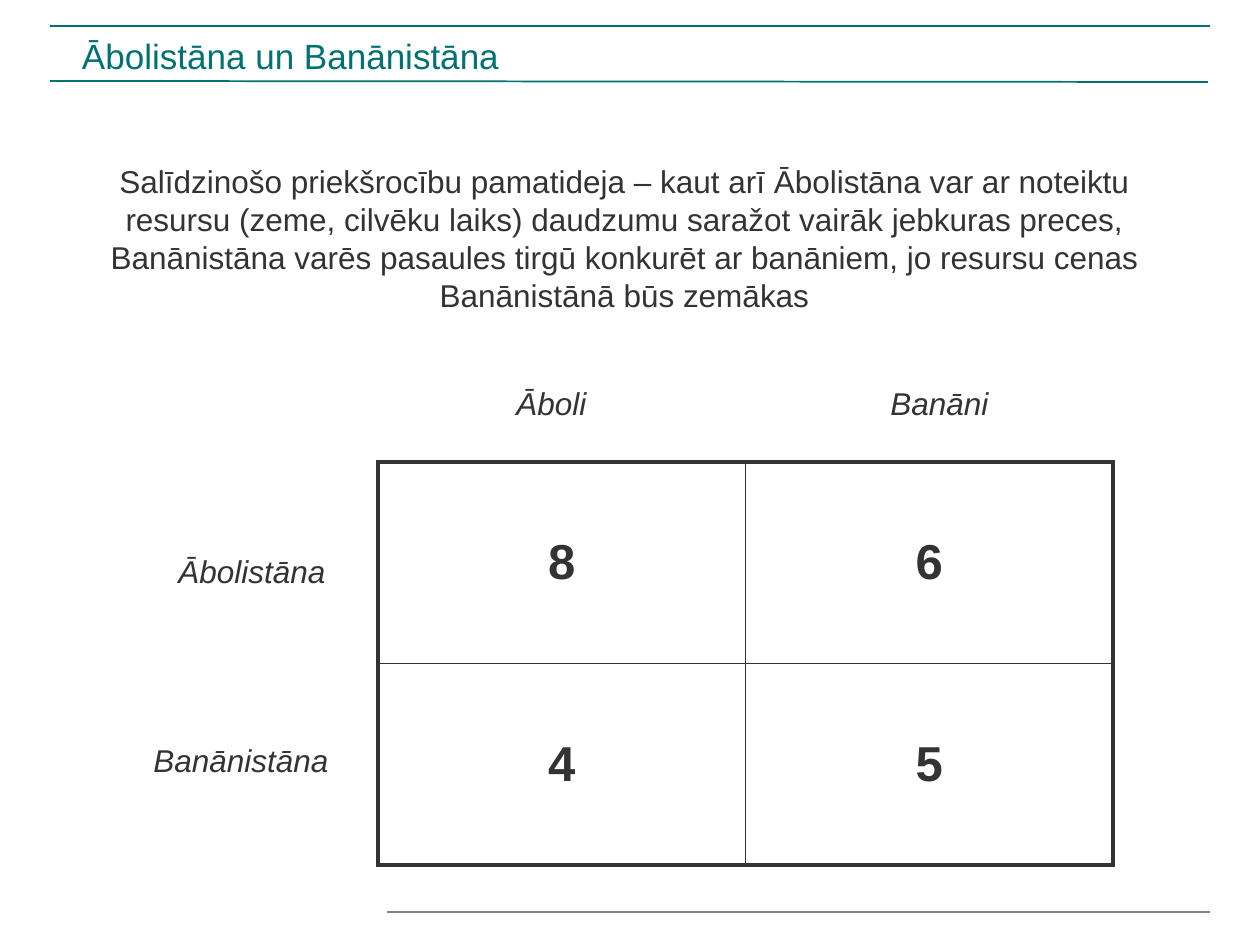
from lxml.etree import SubElement
from pptx import Presentation
from pptx.dml.color import RGBColor
from pptx.enum.shapes import MSO_CONNECTOR
from pptx.enum.text import MSO_ANCHOR, MSO_AUTO_SIZE, PP_ALIGN
from pptx.oxml.ns import qn
from pptx.util import Pt

EMU_PER_PX = 914400 / 126
TEAL = RGBColor(0x00, 0x72, 0x72)
TAUPE = RGBColor(0x8C, 0x82, 0x79)
INK = RGBColor(0x33, 0x33, 0x33)

TITLE_FONT = {"name": "Arial", "size": Pt(20), "bold": False}
BODY_FONT = {"name": "Arial", "size": Pt(18)}
LABEL_FONT = {**BODY_FONT, "italic": True}
VALUE_FONT = {"name": "Arial", "size": Pt(28), "bold": True}
OUTER, INNER = 2.25, 1

TITLE = "Ābolistāna un Banānistāna"
IDEA = (
    "Salīdzinošo priekšrocību pamatideja – kaut arī Ābolistāna var ar noteiktu "
    "resursu (zeme, cilvēku laiks) daudzumu saražot vairāk jebkuras preces, "
    "Banānistāna varēs pasaules tirgū konkurēt ar banāniem, jo resursu cenas "
    "Banānistānā būs zemākas"
)
OUTPUT = [["8", "6"], ["4", "5"]]
GOODS = [("Āboli", 21), ("Banāni", 409)]
COUNTRIES = [("Ābolistāna", -231, 84), ("Banānistāna", -242, 273)]


def px(*lengths):
    """Turn pixel lengths into EMU."""
    return [round(length * EMU_PER_PX) for length in lengths]


def write(frame, text, font_format, color, align=PP_ALIGN.CENTER):
    """Fill a text frame with one formatted paragraph and return it."""
    frame.word_wrap = True
    paragraph = frame.paragraphs[0]
    paragraph.text = text
    paragraph.alignment = align
    font = paragraph.runs[0].font
    for attribute, value in font_format.items():
        setattr(font, attribute, value)
    font.color.rgb = color
    return paragraph


def add_rule(slide, start, end, color):
    """Draw a thin ruling line without a shadow."""
    rule = slide.shapes.add_connector(MSO_CONNECTOR.STRAIGHT, *px(*start, *end))
    rule.line.color.rgb = color
    rule.line.width = Pt(1)
    SubElement(rule._element.spPr, qn("a:effectLst"))


def add_text(slide, box, text, font_format):
    """Add a centred text box."""
    frame = slide.shapes.add_textbox(*px(*box)).text_frame
    write(frame, text, font_format, INK)
    frame.auto_size = MSO_AUTO_SIZE.SHAPE_TO_FIT_TEXT


def add_header(slide, left, top, width, height):
    """Place the title between its two rules."""
    right = left + width
    add_rule(slide, (left, top + height), (right - 2, top + height + 1), TEAL)
    add_rule(slide, (left, top), (right, top), TEAL)
    title = slide.shapes.title
    title.left, title.top, title.width, title.height = px(left + 23, top - 5, 1134, 76)
    frame = title.text_frame
    frame.auto_size = MSO_AUTO_SIZE.NONE
    frame.vertical_anchor = MSO_ANCHOR.MIDDLE
    frame.margin_left, frame.margin_right = px(9, 9)
    frame.margin_top, frame.margin_bottom = px(5, 5)
    write(frame, TITLE, TITLE_FONT, TEAL, PP_ALIGN.LEFT).line_spacing = 0.8


def set_borders(cell, widths):
    """Draw the cell borders with the given widths in points."""
    properties = cell._tc.get_or_add_tcPr()
    for side, width in widths.items():
        border = SubElement(properties, qn(f"a:ln{side}"), w=str(Pt(width)))
        fill = SubElement(border, qn("a:solidFill"))
        SubElement(fill, qn("a:srgbClr"), val=str(INK))


def add_output_matrix(slide, left, top, width, height):
    """Place the output table with its column and row labels."""
    table = slide.shapes.add_table(2, 2, *px(left, top, width, height)).table
    table.first_row = table.horz_banding = False
    for row, values in enumerate(OUTPUT):
        for column, value in enumerate(values):
            cell = table.cell(row, column)
            set_borders(cell, {
                "L": INNER if column else OUTER,
                "R": OUTER if column else INNER,
                "T": INNER if row else OUTER,
                "B": OUTER if row else INNER,
            })
            cell.fill.background()
            cell.vertical_anchor = MSO_ANCHOR.MIDDLE
            write(cell.text_frame, value, VALUE_FONT, INK)
    for good, x in GOODS:
        add_text(slide, (left + x, top - 84, 305, 50), good, LABEL_FONT)
    for country, x, y in COUNTRIES:
        add_text(slide, (left + x, top + y, 210, 50), country, LABEL_FONT)


def main():
    """Build and save the slide."""
    presentation = Presentation()
    presentation.slide_width, presentation.slide_height = px(1260, 945)
    slide = presentation.slides.add_slide(presentation.slide_layouts[5])
    add_rule(slide, (387, 912), (1210, 912), TAUPE)
    add_header(slide, 50, 26, 1160, 55)
    add_output_matrix(slide, 378, 462, 735, 403)
    add_text(slide, (84, 156, 1081, 164), IDEA, BODY_FONT)
    presentation.save("out.pptx")


if __name__ == "__main__":
    main()
